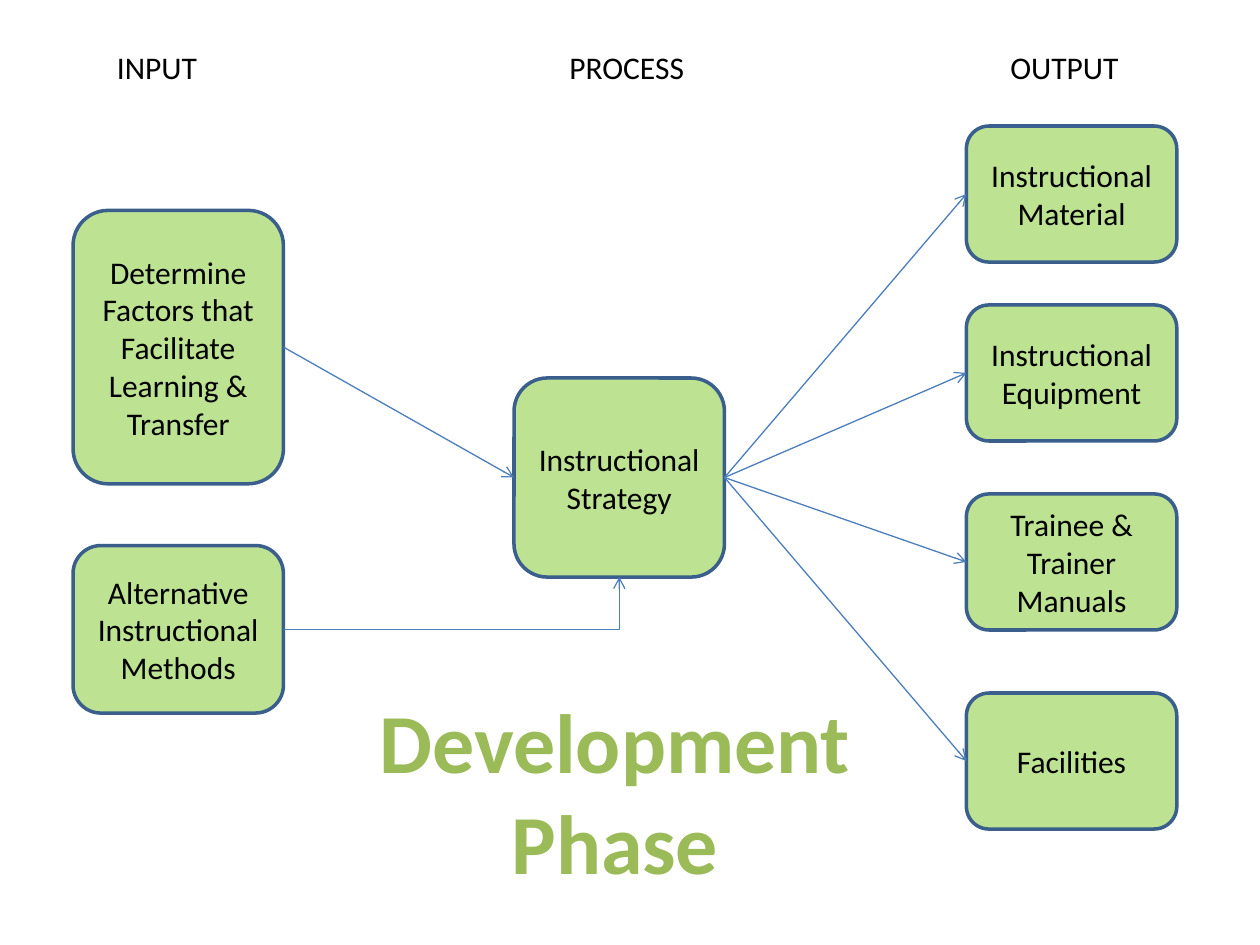
from lxml import etree
from pptx import Presentation
from pptx.dml.color import RGBColor
from pptx.enum.shapes import MSO_CONNECTOR, MSO_SHAPE
from pptx.enum.text import MSO_ANCHOR, MSO_AUTO_SIZE, PP_ALIGN
from pptx.oxml.ns import qn
from pptx.util import Inches, Pt

ROUND = MSO_SHAPE.ROUNDED_RECTANGLE
LINE, ELBOW = MSO_CONNECTOR.STRAIGHT, MSO_CONNECTOR.ELBOW
MIDDLE, TOP = MSO_ANCHOR.MIDDLE, MSO_ANCHOR.TOP
LEFT, CENTER = PP_ALIGN.LEFT, PP_ALIGN.CENTER
FIXED = MSO_AUTO_SIZE.NONE
GREEN, NAVY, BLUE, LEAF, BLACK = "BCE292", "3A5F8C", "4B7EBC", "9BBB59", "000000"
WIDE = 1.67
IN_X, MID_X, OUT_X = 0.58, 4.08, 7.67
SITE = {"left": 1, "base": 2, "right": 3}
PLAIN = {"name": "Calibri", "size": Pt(18), "bold": False}
LARGE = {"name": "Calibri", "size": Pt(48), "bold": True}
HEADS = [("INPUT", 0.83), ("PROCESS", 4.42), ("OUTPUT", 7.92)]
GOALS = [
    ("Instructional Material", 1),
    ("Instructional Equipment", 2.42),
    ("Trainee & Trainer Manuals", 3.92),
    ("Facilities", 5.5),
]


def paint(color, code):
    """Set a colour format from a hex string."""
    color.rgb = RGBColor.from_string(code)


def write(shape, text, look=PLAIN, code=BLACK, align=CENTER, anchor=MIDDLE):
    """Put formatted text into a shape."""
    frame = shape.text_frame
    frame.text = text
    modes = {"word_wrap": True, "auto_size": FIXED, "vertical_anchor": anchor}
    for key, value in modes.items():
        setattr(frame, key, value)
    para = frame.paragraphs[0]
    para.alignment = align
    font = para.runs[0].font
    for key, value in look.items():
        setattr(font, key, value)
    paint(font.color, code)


def add_box(slide, text, left, top, high):
    """Add a rounded step box and return it."""
    place = map(Inches, (left, top, WIDE, high))
    box = slide.shapes.add_shape(ROUND, *place)
    box.shadow.inherit = False
    box.fill.solid()
    paint(box.fill.fore_color, GREEN)
    paint(box.line.color, NAVY)
    box.line.width = Pt(2)
    write(box, text)
    return box


def add_head(slide, text, left):
    """Add a column heading."""
    place = map(Inches, (left, 0.33, 1.25, 0.42))
    write(slide.shapes.add_textbox(*place), text, align=LEFT, anchor=TOP)


def add_title(slide, text):
    """Move the title placeholder and fill it."""
    title = slide.shapes.title
    place = {"left": 2.17, "top": 5.42, "width": 5.42, "height": 1.72}
    for key, value in place.items():
        setattr(title, key, Inches(value))
    write(title, text, LARGE, LEAF, anchor=TOP)


def add_arrow(slide, start, end, kind=LINE, side="left"):
    """Join the right of one box to a side of another."""
    arrow = slide.shapes.add_connector(kind, 0, 0, 0, 0)
    arrow.begin_connect(start, SITE["right"])
    arrow.end_connect(end, SITE[side])
    paint(arrow.line.color, BLUE)
    arrow.line.width = Pt(0.75)
    props = arrow.element.spPr
    if kind == ELBOW:
        props.find(qn("a:prstGeom")).set("prst", "bentConnector2")
    etree.SubElement(props.find(qn("a:ln")), qn("a:tailEnd"), type="arrow")
    etree.SubElement(props, qn("a:effectLst"))


def main():
    """Build the development phase slide."""
    deck = Presentation()
    deck.slide_width, deck.slide_height = Inches(10), Inches(7.5)
    slide = deck.slides.add_slide(deck.slide_layouts[5])
    add_title(slide, "Development Phase")
    for text, left in HEADS:
        add_head(slide, text, left)
    needs = add_box(
        slide, "Determine Factors that Facilitate Learning & Transfer", IN_X, 1.67, 2.17
    )
    means = add_box(slide, "Alternative Instructional Methods", IN_X, 4.33, 1.33)
    plan = add_box(slide, "Instructional Strategy", MID_X, 3, 1.58)
    add_arrow(slide, needs, plan)
    add_arrow(slide, means, plan, ELBOW, "base")
    for text, top in GOALS:
        goal = add_box(slide, text, OUT_X, top, 1.08)
        add_arrow(slide, plan, goal)
    deck.save("out.pptx")


if __name__ == "__main__":
    main()
